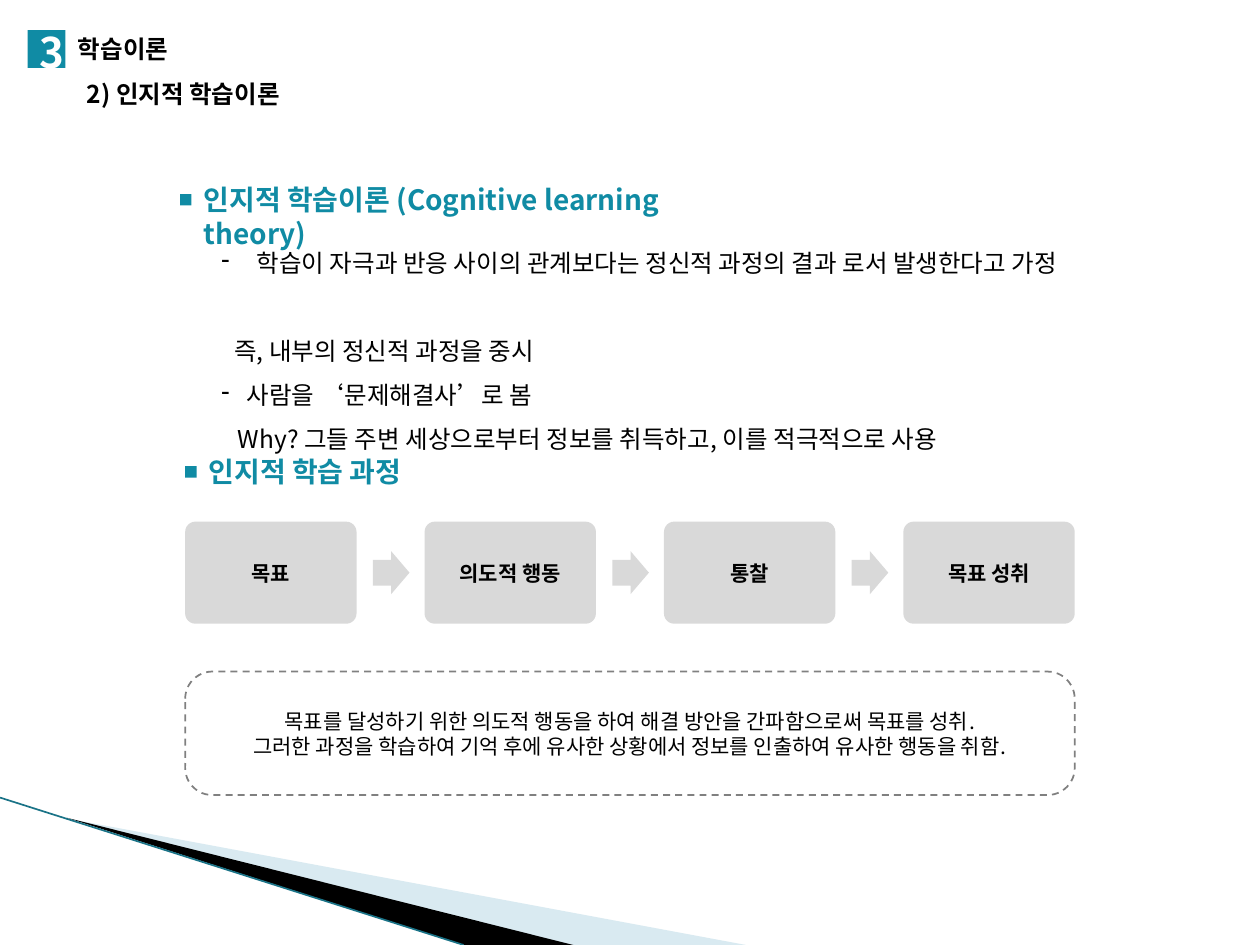
import pptx
import pptx.util
import pptx.dml.color
import pptx.enum.dml
import pptx.enum.shapes
import pptx.enum.text
import pptx.oxml
import pptx.oxml.ns
from pptx.util import Inches

FONT = "Noto Sans CJK KR"
COLORS = {
    "teal": "108BA4",
    "edge": "1A7387",
    "pale": "A0CBDC",
    "black": "000000",
    "white": "FFFFFF",
    "step": "D9D9D9",
    "border": "808080",
}
SHAPES = pptx.enum.shapes.MSO_SHAPE
CENTER = pptx.enum.text.PP_ALIGN.CENTER
MIDDLE = pptx.enum.text.MSO_ANCHOR.MIDDLE


def color(name):
    return pptx.dml.color.RGBColor.from_string(COLORS[name])


def add_element(parent, tag, **attributes):
    element = pptx.oxml.ns.qn(tag)
    child = parent.makeelement(element, attributes)
    parent.append(child)
    return child


def style_paragraph(paragraph, size, color_name, bold=False):
    font = paragraph.font
    font.size = pptx.util.Pt(size)
    font.bold = bold
    font.color.rgb = color(color_name)
    font.name = FONT
    defaults = paragraph._p.get_or_add_pPr().find(pptx.oxml.ns.qn("a:defRPr"))
    add_element(defaults, "a:ea", typeface=FONT)


def add_shape(slide, kind, box, fill=None):
    shape = slide.shapes.add_shape(kind, *map(Inches, box))
    shape.shadow.inherit = False
    shape.line.fill.background()
    if fill:
        shape.fill.solid()
        shape.fill.fore_color.rgb = color(fill)
    else:
        shape.fill.background()
    return shape


def add_label(slide, box, text, size, color_name="black", margin=None):
    frame = slide.shapes.add_textbox(*map(Inches, box)).text_frame
    frame.word_wrap = True
    if margin is not None:
        frame.margin_left = frame.margin_right = Inches(margin)
        frame.margin_top = frame.margin_bottom = Inches(margin)
    frame.text = text
    style_paragraph(frame.paragraphs[0], size, color_name, True)


def add_centered_text(shape, text, bold):
    frame = shape.text_frame
    frame.word_wrap = True
    frame.vertical_anchor = MIDDLE
    paragraph = frame.paragraphs[0]
    paragraph.text = text
    paragraph.alignment = CENTER
    style_paragraph(paragraph, 12, "black", bold)


def add_wedge(slide, points, fill, opacity=None):
    corners = [(Inches(x), Inches(y)) for x, y in points]
    builder = slide.shapes.build_freeform(*corners[0])
    builder.add_line_segments(corners[1:], close=True)
    wedge = builder.convert_to_shape()
    wedge.shadow.inherit = False
    wedge.line.fill.background()
    wedge.fill.solid()
    wedge.fill.fore_color.rgb = color(fill)
    if opacity:
        fill_color = wedge._element.spPr.find(".//" + pptx.oxml.ns.qn("a:srgbClr"))
        add_element(fill_color, "a:alpha", val=str(opacity * 1000))


def add_corner_decoration(slide):
    add_wedge(slide, [(0.55, 6.5), (5.92, 7.5), (4.54, 7.5)], "pale", 40)
    add_wedge(slide, [(0.53, 6.49), (4.55, 7.5), (3.68, 7.5)], "black")
    edge = slide.shapes.add_connector(
        pptx.enum.shapes.MSO_CONNECTOR.STRAIGHT,
        Inches(0), Inches(6.33), Inches(3.68), Inches(7.5),
    )
    edge.line.color.rgb = color("edge")
    edge.line.width = pptx.util.Pt(0.95)
    add_element(edge._element.spPr, "a:effectLst")


def add_title(slide, left, top):
    add_label(slide, (left + 0.3, top - 0.02, 2.71, 0.34), "학습이론", 14)
    add_shape(slide, SHAPES.RECTANGLE, (left, top, 0.3, 0.3), "teal")
    add_label(slide, (left + 0.09, top - 0.03, 0.19, 0.4), "3", 24, "white", 0)
    add_label(slide, (left + 0.37, top + 0.34, 2.2, 0.34), "2) 인지적 학습이론", 14)


def add_heading(slide, left, top, width, text):
    add_shape(slide, SHAPES.RECTANGLE, (left, top + 0.14, 0.09, 0.09), "teal")
    add_label(slide, (left + 0.09, top, width, 0.37), text, 16, "teal")


def add_explanation(slide, box):
    lines = [
        ("학습이 자극과 반응 사이의 관계보다는 정신적 과정의 결과 로서 발생한다고 가정", 0.28, True, 0),
        ("즉, 내부의 정신적 과정을 중시", 0.1, False, 25),
        ("사람을 ‘문제해결사’로 봄", 0.2, True, 0),
        ("Why? 그들 주변 세상으로부터 정보를 취득하고, 이를 적극적으로 사용", 0.13, False, 0),
    ]
    frame = slide.shapes.add_textbox(*map(Inches, box)).text_frame
    frame.word_wrap = True
    for index, (text, indent, dashed, space) in enumerate(lines):
        paragraph = frame.add_paragraph() if index else frame.paragraphs[0]
        paragraph.text = text
        paragraph.line_spacing = 1.5
        if space:
            paragraph.space_before = pptx.util.Pt(space)
        properties = paragraph._p.get_or_add_pPr()
        properties.set("marL", str(Inches(indent)))
        if dashed:
            properties.set("indent", str(-Inches(indent)))
            add_element(properties, "a:buChar", char="-")
        style_paragraph(paragraph, 14, "black")


def add_process(slide, left, top, width, height):
    steps = ["목표", "의도적 행동", "통찰", "목표 성취"]
    step_width = 1.36
    pitch = (width - step_width) / (len(steps) - 1)
    for index, text in enumerate(steps):
        step_left = left + index * pitch
        step = add_shape(
            slide, SHAPES.ROUNDED_RECTANGLE, (step_left, top, step_width, height), "step"
        )
        step.adjustments[0] = 0.1
        add_centered_text(step, text, True)
        if index < len(steps) - 1:
            arrow_box = (step_left + step_width + 0.13, top + (height - 0.34) / 2, 0.29, 0.34)
            arrow = add_shape(slide, SHAPES.RIGHT_ARROW, arrow_box, "step")
            arrow.adjustments[0] = 0.6


def add_summary(slide, box):
    summary = add_shape(slide, SHAPES.ROUNDED_RECTANGLE, box)
    summary.adjustments[0] = 0.22
    summary.line.color.rgb = color("border")
    summary.line.width = pptx.util.Pt(1)
    summary.line.dash_style = pptx.enum.dml.MSO_LINE.DASH
    add_centered_text(
        summary,
        "목표를 달성하기 위한 의도적 행동을 하여 해결 방안을 간파함으로써 목표를 성취.\v"
        "그러한 과정을 학습하여 기억 후에 유사한 상황에서 정보를 인출하여 유사한 행동을 취함.",
        False,
    )


def main():
    presentation = pptx.Presentation()
    presentation.slide_width = Inches(10)
    presentation.slide_height = Inches(7.5)
    slide = presentation.slides.add_slide(presentation.slide_layouts[6])
    add_corner_decoration(slide)
    add_explanation(slide, (1.66, 1.8, 7.06, 1.51))
    add_process(slide, 1.47, 4.14, 7.06, 0.81)
    add_summary(slide, (1.47, 5.33, 7.06, 0.98))
    add_heading(slide, 1.43, 1.4, 4.58, "인지적 학습이론 (Cognitive learning theory)")
    add_heading(slide, 1.47, 3.56, 2.2, "인지적 학습 과정")
    add_title(slide, 0.22, 0.24)
    presentation.save("out.pptx")


if __name__ == "__main__":
    main()
